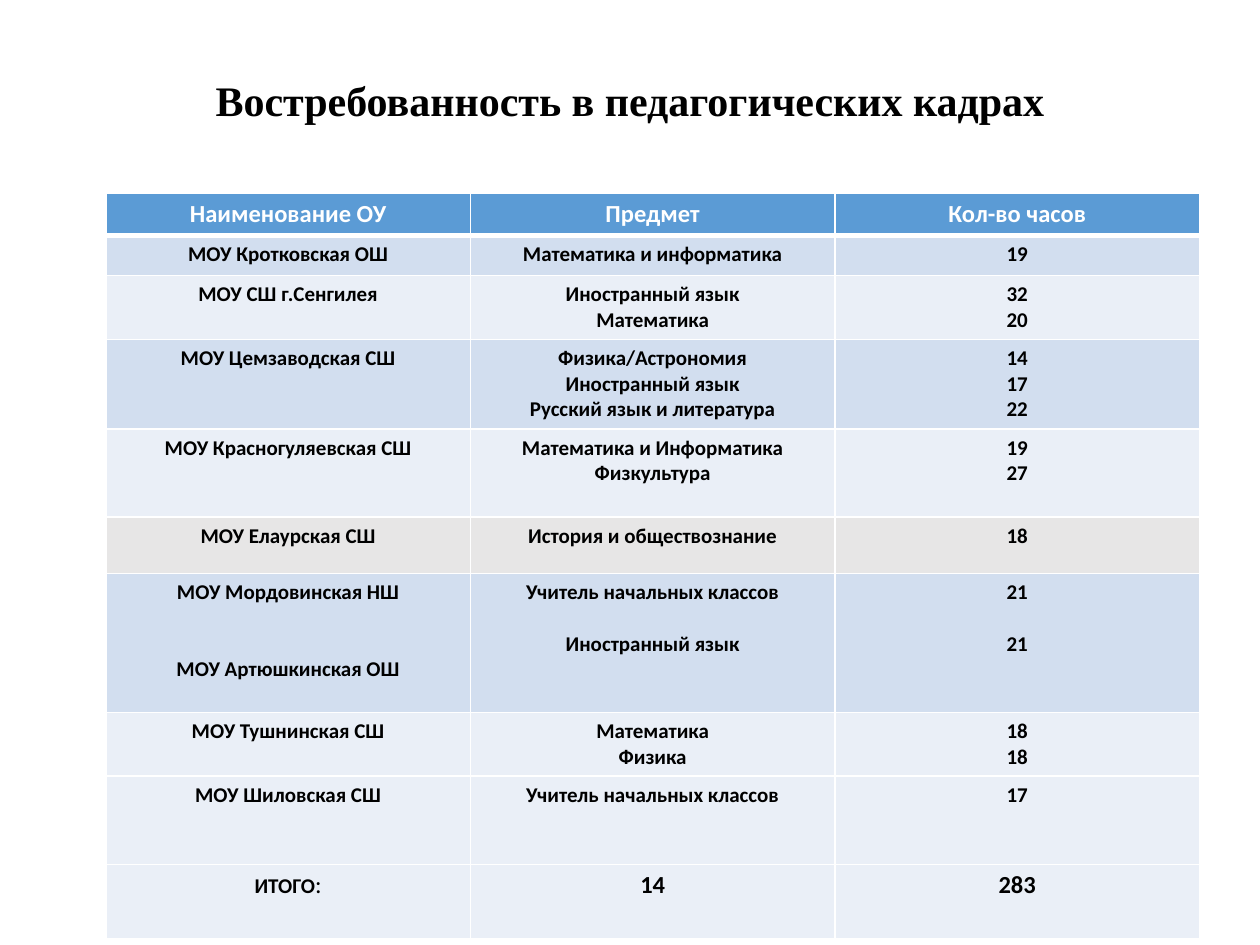
from dataclasses import dataclass

from lxml.etree import SubElement
from pptx import Presentation
from pptx.dml.color import RGBColor as Color
from pptx.enum.text import MSO_ANCHOR as Anchor, MSO_AUTO_SIZE as AutoSize, PP_ALIGN as Align
from pptx.oxml.ns import qn
from pptx.util import Inches, Pt


@dataclass(frozen=True)
class Theme:
    title_font: str = "Times New Roman"
    body_font: str = "Calibri"
    black: str = "000000"
    white: str = "FFFFFF"
    header: str = "5B9BD5"
    dark_band: str = "D2DEEF"
    light_band: str = "EAEFF7"
    gray_band: str = "E7E6E6"
    title_size: float = 24
    large_size: float = 14
    body_size: float = 12
    line_height: float = 14.65  # one body line, in points


THEME = Theme()


@dataclass(frozen=True)
class Line:
    text: str
    skipped: int = 0  # body lines left free above
    size: float = THEME.body_size
    suffix: str = ""  # larger regular text after the bold part


@dataclass(frozen=True)
class Row:
    height: float
    fill: str
    cells: tuple[tuple[Line, ...], ...]
    color: str = THEME.black


def lines(*texts: str, size: float = THEME.body_size) -> tuple[Line, ...]:
    return tuple(Line(text, size=size) for text in texts)


LARGE = THEME.large_size
ROWS = [
    Row(0.33, THEME.header,
        tuple(lines(text, size=LARGE) for text in ("Наименование ОУ", "Предмет", "Кол-во часов")),
        THEME.white),
    Row(0.32, THEME.dark_band,
        (lines("МОУ Кротковская ОШ"), lines("Математика и информатика"), lines("19"))),
    Row(0.5, THEME.light_band,
        (lines("МОУ СШ г.Сенгилея"), lines("Иностранный язык", "Математика"), lines("32", "20"))),
    Row(0.7, THEME.dark_band,
        (lines("МОУ Цемзаводская СШ"),
         lines("Физика/Астрономия", "Иностранный язык", "Русский язык и литература"),
         lines("14", "17", "22"))),
    Row(0.7, THEME.light_band,
        (lines("МОУ Красногуляевская СШ"),
         lines("Математика и Информатика", "Физкультура"), lines("19", "27"))),
    Row(0.45, THEME.gray_band,
        (lines("МОУ Елаурская СШ"), lines("История и обществознание"), lines("18"))),
    Row(1.1, THEME.dark_band,
        ((Line("МОУ Мордовинская НШ"), Line("МОУ Артюшкинская ОШ", skipped=2)),
         (Line("Учитель начальных классов"), Line("Иностранный язык", skipped=1)),
         (Line("21"), Line("21", skipped=1)))),
    Row(0.5, THEME.light_band,
        (lines("МОУ Тушнинская СШ"), lines("Математика", "Физика"), lines("18", "18"))),
    Row(0.7, THEME.light_band,
        (lines("МОУ Шиловская СШ"), lines("Учитель начальных классов"), lines("17"))),
    Row(0.59, THEME.light_band,
        ((Line("ИТОГО", suffix=":"),), lines("14", size=LARGE), lines("283", size=LARGE))),
]


def add_span(para, text: str, font: str, size: float, color: str, bold: bool = True) -> None:
    span = para.add_run()
    span.text = text
    for name, value in {"name": font, "size": Pt(size), "bold": bold}.items():
        setattr(span.font, name, value)
    span.font.color.rgb = Color.from_string(color)


def add_borders(cell, widths: dict[str, float]) -> None:
    properties = cell._tc.get_or_add_tcPr()
    for side, width in widths.items():
        border = SubElement(properties, qn(f"a:ln{side}"), w=str(Pt(width)))
        fill = SubElement(border, qn("a:solidFill"))
        SubElement(fill, qn("a:srgbClr"), val=THEME.white)


def fill_cell(cell, content: tuple[Line, ...], row: Row) -> None:
    cell.fill.solid()
    cell.fill.fore_color.rgb = Color.from_string(row.fill)
    for index, line in enumerate(content):
        frame = cell.text_frame
        para = frame.add_paragraph() if index else frame.paragraphs[0]
        para.alignment = Align.CENTER
        if line.skipped:
            para.space_before = Pt(line.skipped * THEME.line_height)
        add_span(para, line.text, THEME.body_font, line.size, row.color)
        if line.suffix:
            add_span(para, line.suffix, THEME.body_font, LARGE, row.color, bold=False)


def add_title(page, text: str) -> None:
    box = page.shapes.title
    place = {"left": 0.69, "top": 0.29, "width": 8.62, "height": 1.05}
    for name, value in place.items():
        setattr(box, name, Inches(value))
    frame = box.text_frame
    formats = {"word_wrap": True, "auto_size": AutoSize.NONE, "vertical_anchor": Anchor.MIDDLE}
    for name, value in formats.items():
        setattr(frame, name, value)
    para = frame.paragraphs[0]
    para.alignment = Align.CENTER
    para.line_spacing = 0.9
    add_span(para, text, THEME.title_font, THEME.title_size, THEME.black)


def add_staff_table(page, rows: list[Row]) -> None:
    height = sum(row.height for row in rows)
    table = page.shapes.add_table(len(rows), 3, Inches(0.84), Inches(1.53),
                                  Inches(8.68), Inches(height)).table
    for index, row in enumerate(rows):
        table.rows[index].height = Inches(row.height)
        # The rule under the header is thicker than the others
        widths = {"L": 1, "R": 1, "T": 3 if index == 1 else 1, "B": 3 if index == 0 else 1}
        for cell, content in zip(table.rows[index].cells, row.cells):
            add_borders(cell, widths)
            fill_cell(cell, content, row)


def main() -> None:
    deck = Presentation()
    deck.slide_width, deck.slide_height = Inches(10), Inches(7.5)
    page = deck.slides.add_slide(deck.slide_layouts[5])  # title only
    add_title(page, "Востребованность в педагогических кадрах")
    add_staff_table(page, ROWS)
    deck.save("out.pptx")


if __name__ == "__main__":
    main()
